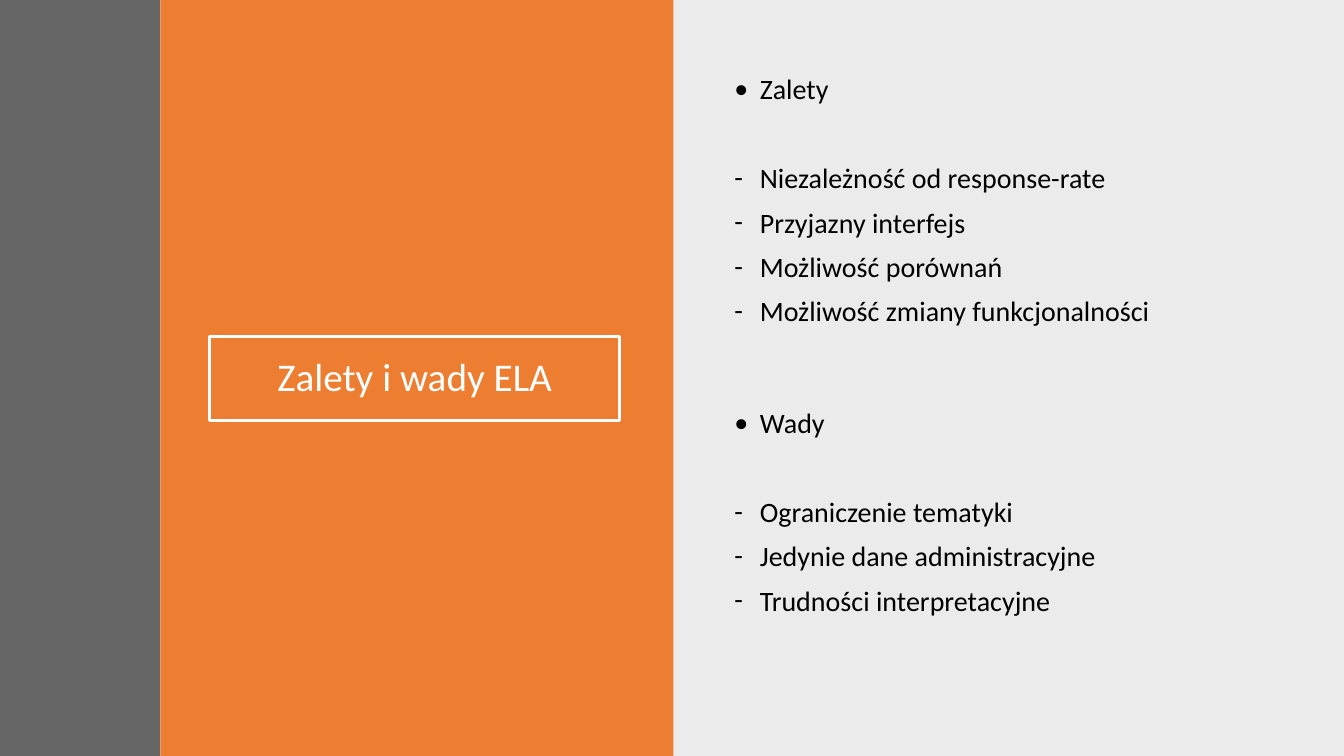
import pptx
import pptx.dml.color
import pptx.enum.shapes
import pptx.enum.text
import pptx.oxml.ns
import pptx.util
from lxml import etree
from pptx.util import Cm

WHITE = pptx.dml.color.RGBColor(0xFF, 0xFF, 0xFF)
BLACK = pptx.dml.color.RGBColor(0x00, 0x00, 0x00)
GRAY = pptx.dml.color.RGBColor(0x40, 0x40, 0x40)
ORANGE = pptx.dml.color.RGBColor(0xED, 0x7D, 0x31)

SLIDE_WIDTH, SLIDE_HEIGHT = Cm(33.87), Cm(19.05)
INDENT = Cm(0.64)

ADVANTAGES = [
    "Niezależność od response-rate",
    "Przyjazny interfejs",
    "Możliwość porównań",
    "Możliwość zmiany funkcjonalności",
]
DISADVANTAGES = [
    "Ograniczenie tematyki",
    "Jedynie dane administracyjne",
    "Trudności interpretacyjne",
]


def add_panel(slide, left, width, color, opacity=100):
    """Add a full-height colour band, opacity in percent."""
    panel = slide.shapes.add_shape(
        pptx.enum.shapes.MSO_SHAPE.RECTANGLE, left, 0, width, SLIDE_HEIGHT)
    panel.shadow.inherit = False
    panel.line.fill.background()
    panel.fill.solid()
    panel.fill.fore_color.rgb = color
    if opacity < 100:
        color_element = panel.fill._xPr.find(".//" + pptx.oxml.ns.qn("a:srgbClr"))
        etree.SubElement(color_element, pptx.oxml.ns.qn("a:alpha"),
                         val=str(opacity * 1000))


def write_paragraph(paragraph, text, size=20, color=BLACK, bullet=None,
                    space_before=0, alignment=None):
    """Write text into a paragraph with its format and optional bullet."""
    paragraph.alignment = alignment
    paragraph.line_spacing = 0.9
    paragraph.space_before = pptx.util.Pt(space_before)
    run = paragraph.add_run()
    run.text = text
    run.font.name = "Calibri"
    run.font.size = pptx.util.Pt(size)
    run.font.color.rgb = color
    if bullet:
        properties = paragraph._p.get_or_add_pPr()
        properties.set("marL", str(INDENT))
        properties.set("indent", str(-INDENT))
        etree.SubElement(properties, pptx.oxml.ns.qn("a:buFont"), typeface="Calibri")
        etree.SubElement(properties, pptx.oxml.ns.qn("a:buChar"), char=bullet)


def add_title(slide, left, top, width, height, text):
    """Add the outlined, centred title."""
    title = slide.shapes.add_textbox(left, top, width, height)
    title.line.color.rgb = WHITE
    title.line.width = pptx.util.Pt(2)
    frame = title.text_frame
    frame.word_wrap = True
    frame.vertical_anchor = pptx.enum.text.MSO_ANCHOR.MIDDLE
    write_paragraph(frame.paragraphs[0], text, size=28, color=WHITE,
                    alignment=pptx.enum.text.PP_ALIGN.CENTER)


def add_list(slide, left, top, width, height, heading, items):
    """Add a bulleted heading with dashed items set apart below it."""
    frame = slide.shapes.add_textbox(left, top, width, height).text_frame
    frame.word_wrap = True
    write_paragraph(frame.paragraphs[0], heading, bullet="•")
    for index, item in enumerate(items):
        write_paragraph(frame.add_paragraph(), item, bullet="-",
                        space_before=10 if index else 42)


def main():
    """Build the slide and save it."""
    presentation = pptx.Presentation()
    presentation.slide_width = SLIDE_WIDTH
    presentation.slide_height = SLIDE_HEIGHT
    slide = presentation.slides.add_slide(presentation.slide_layouts[6])
    add_panel(slide, Cm(16.93), Cm(16.94), BLACK, opacity=8)
    add_panel(slide, Cm(4.04), Cm(12.93), ORANGE)
    add_title(slide, Cm(5.28), Cm(8.48), Cm(10.34), Cm(2.11), "Zalety i wady ELA")
    add_panel(slide, 0, Cm(4.04), GRAY, opacity=80)
    for top, heading, items in ((Cm(1.78), "Zalety", ADVANTAGES),
                                (Cm(10.19), "Wady", DISADVANTAGES)):
        add_list(slide, Cm(18.26), top, Cm(14.05), Cm(7.09), heading, items)
    presentation.save("out.pptx")


if __name__ == "__main__":
    main()
